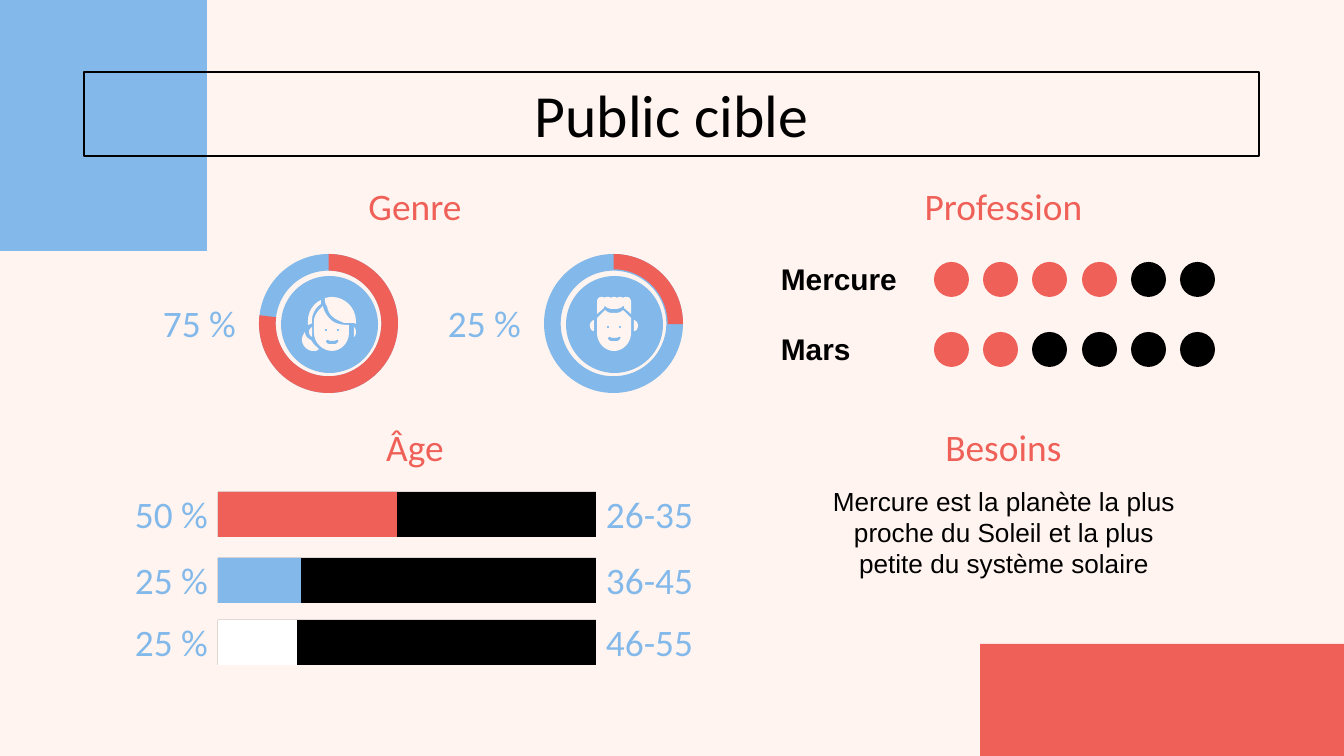
"""Build the target-audience slide with gender rings, age bars, rated dots and needs."""
import pptx
import pptx.dml.color
import pptx.enum.shapes
import pptx.enum.text
import pptx.util

PX = 914400 / 134.4
RED, BLUE, CREAM, BLACK, WHITE = "EF6058", "83B9EA", "FFF4EF", "000000", "FFFFFF"
KIND = pptx.enum.shapes.MSO_SHAPE
ALIGN = pptx.enum.text.PP_ALIGN
ANCHOR = pptx.enum.text.MSO_ANCHOR

CORNERS = [((0, 0, 207, 251), BLUE), ((980, 644, 364, 112), RED)]
TITLE = "Public cible"
HEADINGS = [
    ("Genre", (145, 181, 540, 50)),
    ("Âge", (145, 422, 540, 50)),
    ("Profession", (759, 181, 489, 50)),
    ("Besoins", (759, 422, 489, 50)),
]
NEEDS = "Mercure est la planète la plus proche du Soleil et la plus petite du système solaire"
AGES = [
    ("50 %", "26-35", 492, 179, RED),
    ("25 %", "36-45", 558, 83, BLUE),
    ("25 %", "46-55", 620, 79, WHITE),
]
JOBS = [("Mercure", 4, 262), ("Mars", 2, 332)]
DOTS = 6

WOMAN = [
    [(-17, 3), (-18, 4, -20, 5, -20, 8), (-20, 11, -18, 12, -17, 13)],
    [(-24, 8), (-26, 11, -27, 13, -27, 16), (-27, 21, -22, 27, -16, 27),
     (-13, 27, -12, 27, -10, 25), (-12, 23, -15, 21, -16, 19), (-18, 16),
     (-21, 15, -24, 12, -24, 8)],
    [(-6, -18), (-9, -15), (-12, -12, -15, -7, -15, -3), (-15, 9),
     (-15, 19, -6, 27, 3, 27), (12, 27, 20, 19, 20, 9), (20, 1), (19, 1),
     (12, 1, 7, 0, 2, -4), (-2, -8, -5, -12, -6, -18)],
    [(25, 3), (25, 13), (26, 12, 27, 11, 27, 8), (27, 5, 26, 4, 25, 3)],
    [(3, -27), (0, -27, -2, -26, -4, -26), (-4, -23, -4, -20, -2, -18),
     (-1, -14, 0, -10, 4, -7), (7, -4, 11, -3, 15, -1), (25, -1), (27, 0),
     (27, -3), (27, -16, 16, -27, 3, -27)],
    [(-8, -24), (-16, -20, -21, -12, -21, -3), (-21, 1), (-18, 0), (-17, -1),
     (-17, -4), (-17, -10, -13, -17, -8, -20)],
]
MAN = [
    [(-20, -4), (-23, -3, -24, 0, -24, 1), (-24, 4, -23, 7, -20, 7)],
    [(-6, -27), (-8, -27, -9, -27, -9, -26), (-10, -27, -12, -27, -13, -27),
     (-16, -27, -17, -24, -17, -22), (-17, -10), (-10, -16),
     (-10, -18, -9, -18, -9, -18), (-6, -15, -3, -15, 0, -15),
     (3, -15, 6, -15, 9, -18), (10, -18, 10, -18, 10, -16), (17, -10),
     (17, -22), (17, -24, 16, -27, 13, -27), (11, -27, 10, -27, 9, -26),
     (8, -27, 7, -27, 6, -27), (5, -27, 4, -27, 3, -26),
     (2, -27, 1, -27, 0, -27), (-1, -27, -2, -27, -3, -26),
     (-4, -27, -5, -27, -6, -27)],
    [(-9, -14), (-17, -6), (-17, 9), (-17, 19, -9, 27, 0, 27),
     (9, 27, 17, 19, 17, 9), (17, -6), (9, -14), (6, -11, 3, -11, 0, -11),
     (-3, -11, -6, -11, -9, -14)],
    [(20, -4), (20, 7), (23, 7, 24, 4, 24, 1), (24, 0, 23, -3, 20, -4)],
]
MOUTH = [(5, 16), (7, 16, 7, 17, 5, 19), (4, 20, 3, 20, 0, 20),
         (-3, 20, -4, 20, -5, 19), (-7, 17, -5, 16, -4, 16),
         (-3, 17, -2, 17, 0, 17), (2, 17, 3, 17, 5, 16)]
GENDERS = [
    ("75 %", 329, (162.11, 112.07, 0.12), WOMAN, (3, 0)),
    ("25 %", 614, (162.11, 0.39, 0.11), MAN, (0, -3)),
]
MIDDLE = 324


def px(length):
    return pptx.util.Emu(round(length * PX))


def color(value):
    return pptx.dml.color.RGBColor.from_string(value)


def paint(shape, fill):
    shape.shadow.inherit = False
    shape.fill.solid()
    shape.fill.fore_color.rgb = color(fill)
    shape.line.fill.background()


def add_shape(page, kind, place, fill, adjustments=()):
    shape = page.shapes.add_shape(kind, *map(px, place))
    paint(shape, fill)
    for index, value in enumerate(adjustments):
        shape.adjustments[index] = value


def add_text(page, text, place, size, fill, align=ALIGN.LEFT, font="Calibri",
             bold=False, inset=0, anchor=ANCHOR.MIDDLE):
    box = page.shapes.add_textbox(*map(px, place))
    frame = box.text_frame
    frame.word_wrap = True
    frame.vertical_anchor = anchor
    frame.margin_left = frame.margin_right = px(inset)
    frame.margin_top = frame.margin_bottom = px(inset)
    para = frame.paragraphs[0]
    para.text = text
    para.alignment = align
    para.font.name = font
    para.font.size = pptx.util.Pt(size)
    para.font.bold = bold
    para.font.color.rgb = color(fill)
    return box


def trace(outline, steps=8):
    points = [outline[0]]
    for segment in outline[1:]:
        if len(segment) == 2:
            points.append(segment)
            continue
        knots = [points[-1], segment[:2], segment[2:4], segment[4:]]
        for step in range(1, steps + 1):
            t = step / steps
            weights = ((1 - t) ** 3, 3 * t * (1 - t) ** 2, 3 * t * t * (1 - t), t ** 3)
            points.append(tuple(sum(w * knot[axis] for w, knot in zip(weights, knots))
                                for axis in (0, 1)))
    return points


def add_outline(page, outline, x, y, fill):
    points = [(px(x + dx), px(y + dy)) for dx, dy in trace(outline)]
    builder = page.shapes.build_freeform(*points[0])
    builder.add_line_segments(points[1:], close=True)
    paint(builder.convert_to_shape(), fill)


def add_gender(page, label, center, arc, portrait, shift):
    ring = (center - 70, 254, 139, 139)
    add_shape(page, KIND.OVAL, (center - 48, 276, 97, 97), BLUE)
    add_shape(page, KIND.DONUT, ring, BLUE, [0.12])
    add_shape(page, KIND.BLOCK_ARC, ring, RED, arc)
    add_text(page, label, (center - 183, 298, 90, 50), 20, BLUE, ALIGN.RIGHT)
    for outline in portrait:
        add_outline(page, outline, center, MIDDLE, CREAM)
    x, y = center + shift[0], MIDDLE + shift[1]
    add_outline(page, MOUTH, x, y, BLUE)
    for side in (-6, 6):
        add_shape(page, KIND.OVAL, (x + side - 1, y + 5, 2, 2), BLUE)


def main():
    deck = pptx.Presentation()
    deck.slide_width, deck.slide_height = px(1344), px(756)
    page = deck.slides.add_slide(deck.slide_layouts[6])
    page.background.fill.solid()
    page.background.fill.fore_color.rgb = color(CREAM)

    for place, fill in CORNERS:
        add_shape(page, KIND.RECTANGLE, place, fill)
    title = add_text(page, TITLE, (84, 72, 1175, 84), 32, BLACK, ALIGN.CENTER, inset=13)
    title.line.color.rgb = color(BLACK)
    title.line.width = pptx.util.Pt(1.5)
    for text, place in HEADINGS:
        add_text(page, text, place, 20, RED, ALIGN.CENTER)

    for gender in GENDERS:
        add_gender(page, *gender)

    for share, ages, top, width, fill in AGES:
        add_shape(page, KIND.RECTANGLE, (218, top, 378, 45), BLACK)
        add_shape(page, KIND.RECTANGLE, (218, top, width, 45), fill)
        add_text(page, share, (84, top - 3, 124, 50), 20, BLUE, ALIGN.RIGHT)
        add_text(page, ages, (606, top - 3, 138, 50), 20, BLUE)

    for job, score, top in JOBS:
        add_text(page, job, (781, top - 11, 138, 56), 16, BLACK, font="Arial", bold=True)
        for index in range(DOTS):
            left = 934 + round(index * 246 / (DOTS - 1))
            add_shape(page, KIND.OVAL, (left, top, 35, 35), RED if index < score else BLACK)

    add_text(page, NEEDS, (812, 472, 384, 122), 14, BLACK, ALIGN.CENTER,
             font="Arial", inset=13, anchor=ANCHOR.TOP)
    deck.save("out.pptx")


if __name__ == "__main__":
    main()
